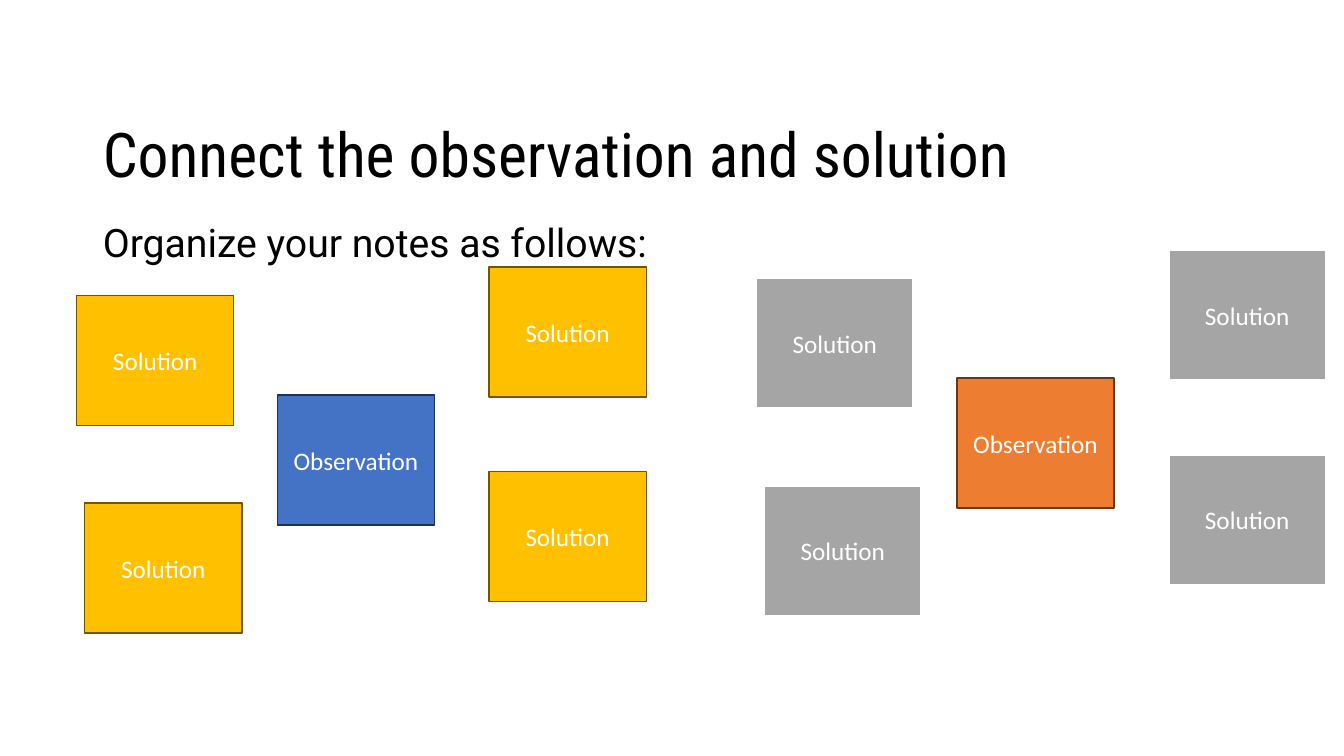
"""Build the slide that groups solution notes around observations."""
from dataclasses import dataclass

from lxml import etree
from pptx import Presentation
from pptx.dml.color import RGBColor
from pptx.enum.shapes import MSO_SHAPE
from pptx.enum.text import MSO_ANCHOR, MSO_AUTO_SIZE, PP_ALIGN
from pptx.oxml.ns import qn
from pptx.util import Inches, Pt

RECT = MSO_SHAPE.RECTANGLE
TOP, MIDDLE = MSO_ANCHOR.TOP, MSO_ANCHOR.MIDDLE
LEFT, CENTER = PP_ALIGN.LEFT, PP_ALIGN.CENTER
FIXED = MSO_AUTO_SIZE.NONE


@dataclass(frozen=True)
class Type:
    font: str
    size: int
    color: str


@dataclass(frozen=True)
class Paint:
    fill: str
    line: str
    width: float


@dataclass(frozen=True)
class Theme:
    title: Type = Type("Roboto Condensed", 44, "000000")
    body: Type = Type("Roboto", 28, "000000")
    note: Type = Type("Calibri", 18, "FFFFFF")
    blue: Paint = Paint("4472C4", "1E3256", 1)
    gold: Paint = Paint("FFC000", "705400", 1)
    orange: Paint = Paint("ED7D31", "683715", 1)
    gray: Paint = Paint("A5A5A5", "FFFFFF", 1.5)


@dataclass(frozen=True)
class Group:
    left: float
    top: float
    center: Paint
    around: Paint


THEME = Theme()
NOTE_W, NOTE_H = 1.56, 1.29
OFFSETS = ((2.1, -1.27), (2.1, 0.76), (-1.99, -0.99), (-1.91, 1.07))
GROUPS = (
    Group(2.75, 3.92, THEME.blue, THEME.gold),
    Group(9.49, 3.75, THEME.orange, THEME.gray),
)


def write(shape, text: str, style: Type, align, anchor) -> None:
    """Put one styled paragraph into a shape."""
    frame = shape.text_frame
    frame.text = text
    frame.word_wrap = True
    frame.auto_size = FIXED
    frame.vertical_anchor = anchor
    para = frame.paragraphs[0]
    para.alignment = align
    font = para.runs[0].font
    font.name = style.font
    font.size = Pt(style.size)
    font.color.rgb = RGBColor.from_string(style.color)


def place(shape, left: float, top: float, width: float, height: float) -> None:
    """Move and size a placeholder."""
    shape.left, shape.top = Inches(left), Inches(top)
    shape.width, shape.height = Inches(width), Inches(height)


def plain(shape) -> None:
    """Give a placeholder paragraph tight lines and no bullet."""
    para = shape.text_frame.paragraphs[0]
    para.line_spacing = 0.9
    para.space_before = Pt(0)
    props = para._p.get_or_add_pPr()
    props.set("marL", "0")
    props.set("indent", "0")
    etree.SubElement(props, qn("a:buNone"))


def note(slide, text: str, left: float, top: float, paint: Paint) -> None:
    """Draw one note."""
    box = slide.shapes.add_shape(
        RECT, Inches(left), Inches(top), Inches(NOTE_W), Inches(NOTE_H))
    box.shadow.inherit = False
    box.fill.solid()
    box.fill.fore_color.rgb = RGBColor.from_string(paint.fill)
    box.line.color.rgb = RGBColor.from_string(paint.line)
    box.line.width = Pt(paint.width)
    write(box, text, THEME.note, CENTER, MIDDLE)


def cluster(slide, group: Group) -> None:
    """Draw an observation and the solutions around it."""
    note(slide, "Observation", group.left, group.top, group.center)
    for right, down in OFFSETS:
        note(slide, "Solution", group.left + right, group.top + down, group.around)


def main() -> None:
    """Build and save the deck."""
    deck = Presentation()
    deck.slide_width, deck.slide_height = Inches(13.33), Inches(7.5)
    slide = deck.slides.add_slide(deck.slide_layouts[1])
    title, body = slide.shapes.title, slide.placeholders[1]
    place(title, 0.92, 0.84, 11.5, 1.45)
    write(title, "Connect the observation and solution", THEME.title, LEFT, MIDDLE)
    place(body, 0.92, 2.17, 11.13, 0.68)
    write(body, "Organize your notes as follows:", THEME.body, LEFT, TOP)
    for shape in (title, body):
        plain(shape)
    for group in GROUPS:
        cluster(slide, group)
    deck.save("out.pptx")


if __name__ == "__main__":
    main()
